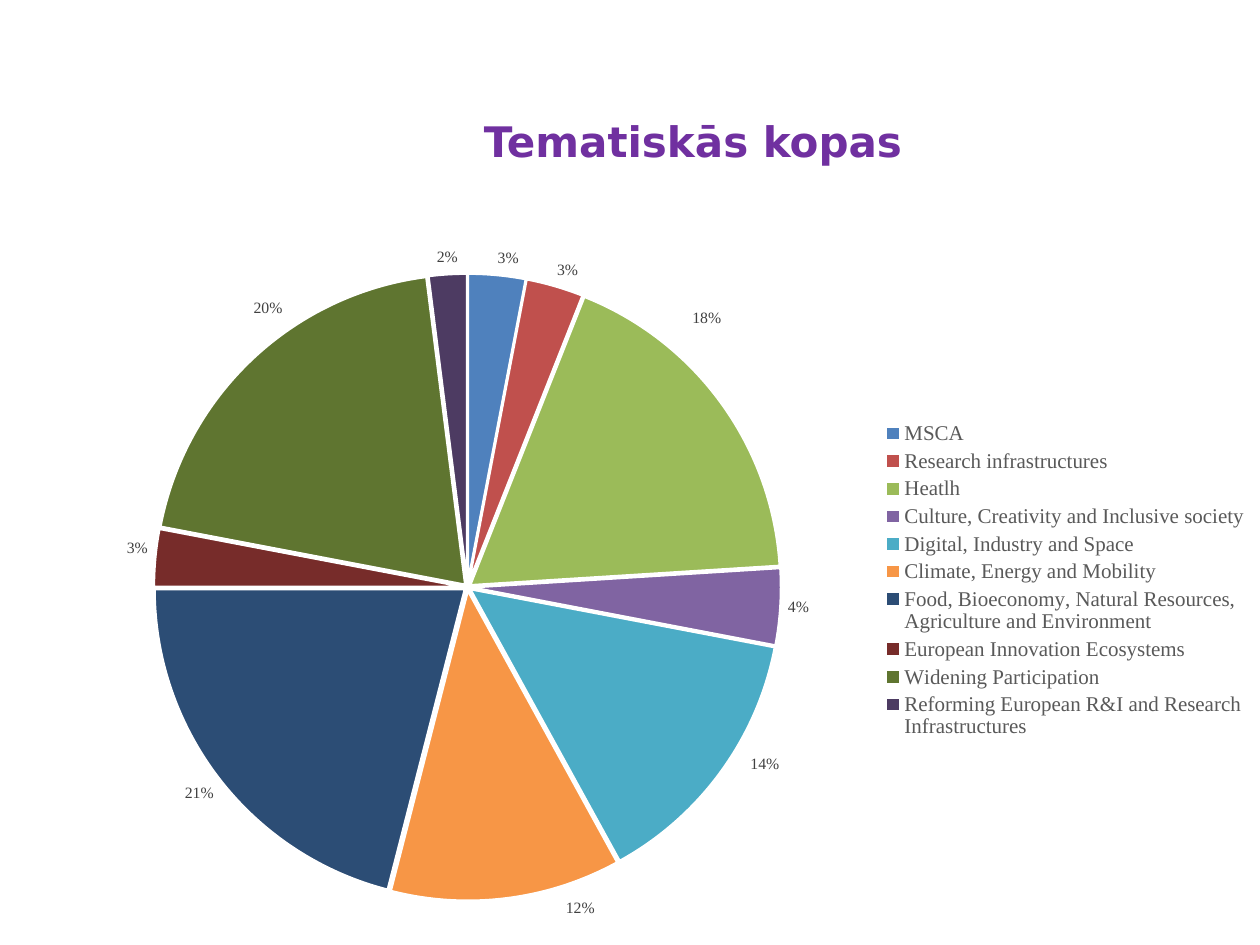
from lxml import etree
from pptx import Presentation
from pptx import util as u
from pptx.chart.data import CategoryChartData
from pptx.dml.color import RGBColor
from pptx.enum import chart as charts, text
from pptx.oxml.ns import qn

SHARES = [
    ("MSCA", 3, "4F81BD"),
    ("Research infrastructures", 3, "C0504D"),
    ("Heatlh", 18, "9BBB59"),
    ("Culture, Creativity and Inclusive society", 4, "8064A2"),
    ("Digital, Industry and Space", 14, "4BACC6"),
    ("Climate, Energy and Mobility", 12, "F79646"),
    ("Food, Bioeconomy, Natural Resources, Agriculture and Environment", 21, "2C4D75"),
    ("European Innovation Ecosystems", 3, "772C2A"),
    ("Widening Participation", 20, "5F7530"),
    ("Reforming European R&I and Research Infrastructures", 2, "4D3B62"),
]
LABEL_SHIFTS = {2: (-0.03, -0.1), 4: (0.02, -0.03), 5: (0.05, -0.01), 8: (0.03, -0.05)}


def color(value):
    """Return the colour for a hex string."""
    return RGBColor.from_string(value)


def style(font, size, value, name="Times New Roman"):
    """Set size, colour and typeface of a font."""
    font.size = u.Pt(size)
    font.color.rgb = color(value)
    font.name = name


def make_layout(**settings):
    """Return a manual chart layout element."""
    layout = etree.Element(qn("c:layout"))
    manual = etree.SubElement(layout, qn("c:manualLayout"))
    for key, value in settings.items():
        etree.SubElement(manual, qn(f"c:{key}")).set("val", str(value))
    return layout


def add_title(page, box):
    """Place the centred slide title in the box."""
    frame = page.shapes.add_textbox(*map(u.Inches, box)).text_frame
    frame.word_wrap = True
    para = frame.paragraphs[0]
    para.alignment = text.PP_ALIGN.CENTER
    span = para.add_run()
    span.text = "Tematiskās kopas"
    style(span.font, 24, "7030A0", "DejaVu Sans")
    span.font.bold = True


def color_slices(series):
    """Colour the slices and pull them slightly apart."""
    series.format.fill.solid()
    series.format.fill.fore_color.rgb = color(SHARES[0][2])
    explosion = etree.Element(qn("c:explosion"))
    explosion.set("val", "1")
    series.format.line.color.rgb = color("FFFFFF")
    series._element.find(qn("c:spPr")).addnext(explosion)
    for index, (_, _, fill) in enumerate(SHARES):
        look = series.points[index].format
        look.fill.solid()
        look.fill.fore_color.rgb = color(fill)
        look.line.color.rgb = color("FFFFFF")
        look.line.width = u.Pt(1.5)


def label_slices(series):
    """Show percentages outside the pie and shift the labels listed."""
    labels = series.data_labels
    labels.show_value = False
    labels.show_percentage = True
    labels.number_format = "0%"
    labels.number_format_is_linked = False
    labels.position = charts.XL_LABEL_POSITION.OUTSIDE_END
    style(labels.font, 9, "404040")
    for index, (across, down) in LABEL_SHIFTS.items():
        label = series.points[index].data_label
        style(label.font, 9, "404040")
        label.position = charts.XL_LABEL_POSITION.OUTSIDE_END
    for element in series._element.iter(qn("c:dLbl")):
        number = element.find(qn("c:idx"))
        across, down = LABEL_SHIFTS[int(number.get("val"))]
        number.addnext(make_layout(x=across, y=down))
        element.find(qn("c:showVal")).set("val", "0")
        element.find(qn("c:showPercent")).set("val", "1")


def add_pie(page, box):
    """Place the pie of thematic clusters and its legend in the box."""
    data = CategoryChartData()
    data.categories = [name for name, _, _ in SHARES]
    data.add_series("Series 1", [share for _, share, _ in SHARES])
    frame = page.shapes.add_chart(charts.XL_CHART_TYPE.PIE, *map(u.Inches, box), data)
    chart = frame.chart
    chart.has_title = False
    style(chart.font, 10, "000000")
    chart.plots[0].vary_by_categories = True
    series = chart.plots[0].series[0]
    color_slices(series)
    label_slices(series)

    chart.has_legend = True
    legend = chart.legend
    legend.position = charts.XL_LEGEND_POSITION.RIGHT
    legend.include_in_layout = False
    style(legend.font, 12, "595959")
    place = legend._element
    for old in place.findall(qn("c:layout")):
        place.remove(old)
    place.find(qn("c:legendPos")).addnext(
        make_layout(xMode="edge", yMode="edge", x=0.67, y=0.27, w=0.33, h=0.46))

    area = chart._chartSpace.chart.plotArea
    for old in area.findall(qn("c:layout")):
        area.remove(old)
    area.insert(0, make_layout(layoutTarget="inner", xMode="edge", yMode="edge",
                               x=0.05, y=0.06, w=0.54, h=0.9))


def main():
    """Build the slide and save it."""
    deck = Presentation()
    deck.slide_width, deck.slide_height = u.Inches(10), u.Inches(7.5)
    page = deck.slides.add_slide(deck.slide_layouts[6])
    add_title(page, (1.8, 0.87, 7.4, 1.13))
    add_pie(page, (0.76, 1.79, 9.22, 5.63))
    deck.save("out.pptx")


if __name__ == "__main__":
    main()
